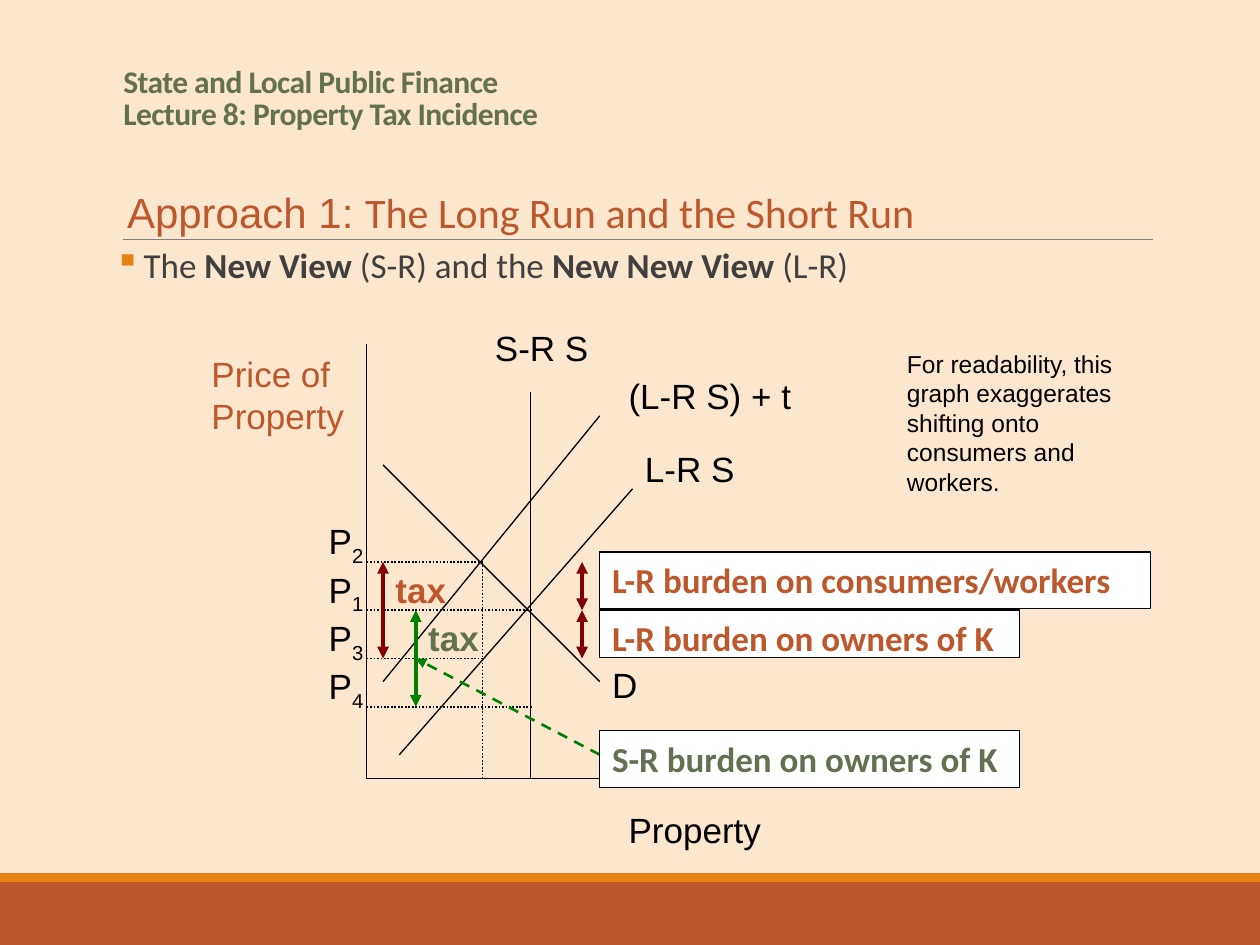
from dataclasses import dataclass

from lxml import etree
from pptx import Presentation
from pptx.dml.color import RGBColor
from pptx.enum.dml import MSO_LINE
from pptx.enum.shapes import MSO_CONNECTOR, MSO_SHAPE
from pptx.enum.text import MSO_ANCHOR
from pptx.oxml.ns import qn
from pptx.util import Inches, Pt

RECTANGLE = MSO_SHAPE.RECTANGLE
STRAIGHT = MSO_CONNECTOR.STRAIGHT
BOTTOM, TOP = MSO_ANCHOR.BOTTOM, MSO_ANCHOR.TOP
DOTTED, DASHED = MSO_LINE.ROUND_DOT, MSO_LINE.DASH


@dataclass(frozen=True)
class Theme:
    background: str = "FBE6CE"
    rust: str = "BD582C"
    orange: str = "E48312"
    olive: str = "637052"
    gray: str = "404040"
    rule: str = "808080"
    black: str = "000000"
    white: str = "FFFFFF"
    maroon: str = "800000"
    green: str = "008000"
    plain: str = "Arial"
    heading: str = "Calibri"
    note_size: int = 14
    title_size: int = 18
    text_size: int = 20
    subtitle_size: int = 24


THEME = Theme()


@dataclass(frozen=True)
class Line:
    start: tuple[float, float]
    end: tuple[float, float]
    color: str = THEME.black
    width: float = 0.75
    dash: MSO_LINE | None = None
    heads: tuple[str, ...] = ()


@dataclass(frozen=True)
class Label:
    text: str
    box: tuple[float, float, float, float]
    color: str = THEME.black
    size: int = THEME.text_size
    font: str = THEME.plain
    bold: bool | None = None
    subscript: str = ""


def rgb(color: str) -> RGBColor:
    return RGBColor.from_string(color)


def add_rectangle(slide, box, fill: str, outline: str | None = None):
    shape = slide.shapes.add_shape(RECTANGLE, *map(Inches, box))
    shape.shadow.inherit = False
    shape.fill.solid()
    shape.fill.fore_color.rgb = rgb(fill)
    if outline:
        shape.line.color.rgb = rgb(outline)
        shape.line.width = Pt(0.75)
    else:
        shape.line.fill.background()
    return shape


def add_line(slide, line: Line) -> None:
    points = map(Inches, (*line.start, *line.end))
    connector = slide.shapes.add_connector(STRAIGHT, *points)
    connector.line.color.rgb = rgb(line.color)
    connector.line.width = Pt(line.width)
    if line.dash:
        connector.line.dash_style = line.dash
    properties = connector.element.spPr
    outline = properties.find(qn("a:ln"))
    for head in line.heads:
        etree.SubElement(outline, qn(f"a:{head}"), type="triangle")
    etree.SubElement(properties, qn("a:effectLst"))


def write_label(shape, label: Label):
    """Put the label's text into a shape and return its paragraph."""
    frame = shape.text_frame
    frame.word_wrap = True
    frame.vertical_anchor = TOP
    paragraph = frame.paragraphs[0]
    paragraph.text = label.text
    paragraph.alignment = 1
    font = paragraph.font
    font.name, font.size, font.bold = label.font, Pt(label.size), label.bold
    font.color.rgb = rgb(label.color)
    if label.subscript:
        run = paragraph.add_run()
        run.text = label.subscript
        run.font._element.set("baseline", "-25000")
    return paragraph


def add_label(slide, label: Label):
    shape = slide.shapes.add_textbox(*map(Inches, label.box))
    return shape, write_label(shape, label)


def add_boxed_label(slide, text: str, box, color: str) -> None:
    shape = add_rectangle(slide, box, THEME.white, THEME.black)
    write_label(shape, Label(text, box, color, font=THEME.heading, bold=True))


def add_headings(slide) -> None:
    shape, paragraph = add_label(slide, Label(
        "State and Local Public Finance\vLecture 8: Property Tax Incidence",
        (0.88, 0.33, 8.25, 0.77), THEME.olive, THEME.title_size, THEME.heading, True))
    shape.text_frame.vertical_anchor = BOTTOM
    paragraph.line_spacing = 0.85
    for run in paragraph.runs:
        run.font._element.set("spc", "-30")

    shape, paragraph = add_label(slide, Label(
        "Approach 1: ", (0.91, 1.43, 6.51, 0.5), THEME.rust, THEME.subtitle_size))
    shape.text_frame.word_wrap = False
    run = paragraph.add_run()
    run.text = "The Long Run and the Short Run"
    run.font.name = THEME.heading

    shape, paragraph = add_label(slide, Label(
        "The ", (0.91, 1.95, 6.76, 0.38), THEME.gray, font=THEME.heading))
    shape.text_frame.margin_left = shape.text_frame.margin_right = 0
    paragraph.line_spacing = 0.8
    paragraph.space_before, paragraph.space_after = Pt(6.8), Pt(1.1)
    for text, bold in (("New View", True), (" (S-R) and the ", False),
                       ("New New View ", True), ("(L-R)", False)):
        run = paragraph.add_run()
        run.text, run.font.bold = text, bold
    add_bullet(paragraph, "▪", THEME.orange, 0.23)


def add_bullet(paragraph, character: str, color: str, indent: float) -> None:
    properties = paragraph._p.get_or_add_pPr()
    properties.set("marL", str(Inches(indent)))
    properties.set("indent", str(-Inches(indent)))
    bullet_color = etree.Element(qn("a:buClr"))
    etree.SubElement(bullet_color, qn("a:srgbClr"), val=color)
    bullet = etree.Element(qn("a:buChar"), char=character)
    default_run = properties.find(qn("a:defRPr"))
    default_run.addprevious(bullet_color)
    default_run.addprevious(bullet)


def add_graph(slide) -> None:
    left, base, step = 2.91, 6.18, 0.383
    price = {name: 4.46 + step * row for row, name in enumerate("2134")}
    guide_ends = {"2": 3.83, "1": 4.23, "3": 3.83, "4": 4.23}
    both = ("headEnd", "tailEnd")

    lines = [
        Line((left, 2.73), (left, base)),
        Line((left, base), (5.15, base)),
        Line((3.04, 3.69), (4.76, 5.41)),  # demand
        Line((3.04, 5.41), (4.76, 3.3)),  # long-run supply plus tax
        Line((3.17, 5.99), (5.02, 3.88)),  # long-run supply
        Line((4.21, base), (4.21, 3.11)),  # short-run supply
        Line((3.83, price["2"]), (3.83, base), width=1, dash=DOTTED),
    ]
    lines += [Line((left, price[name]), (end, price[name]), width=1, dash=DOTTED)
              for name, end in guide_ends.items()]
    lines += [Line((x, price[upper]), (x, price[lower]), color, 2.25, heads=both)
              for x, upper, lower, color in (
                  (3.04, "2", "3", THEME.maroon), (4.62, "2", "1", THEME.maroon),
                  (4.62, "1", "3", THEME.maroon), (3.3, "1", "4", THEME.green))]
    lines.append(Line((4.76, 5.99), (3.3, price["3"]), THEME.green, 1.5, DASHED, ("tailEnd",)))
    for line in lines:
        add_line(slide, line)

    labels = [Label("P", (2.51, level - step, 0.53, 0.58), subscript=name)
              for name, level in price.items()]
    labels += [
        Label("Property", (4.89, 6.37, 1.95, 0.77)),
        Label("L-R S", (5.02, 3.5, 1.06, 0.58)),
        Label("(L-R S) + t", (4.89, 2.92, 1.72, 0.57)),
        Label("S-R S", (3.83, 2.54, 1.06, 0.58)),
        Label("D", (4.76, 5.22, 0.66, 0.58)),
        Label("tax", (3.04, price["2"], 0.75, 0.76), THEME.rust, bold=True),
        Label("tax", (3.3, price["1"], 0.75, 0.76), THEME.olive, bold=True),
        Label("Price of Property", (1.58, 2.75, 1.27, 0.71), THEME.rust),
        Label("For readability, this graph exaggerates shifting onto consumers and workers.",
              (7.1, 2.72, 1.96, 1.28), size=THEME.note_size),
    ]
    for label in labels:
        add_label(slide, label)

    for text, top, width, height, color in (
            ("L-R burden on consumers/workers", 4.38, 4.37, 0.45, THEME.rust),
            ("L-R burden on owners of K", 4.84, 3.33, 0.38, THEME.rust),
            ("S-R burden on owners of K", 5.8, 3.33, 0.45, THEME.olive)):
        add_boxed_label(slide, text, (4.76, top, width, height), color)


def main() -> None:
    presentation = Presentation()
    presentation.slide_width, presentation.slide_height = Inches(10), Inches(7.5)
    slide = presentation.slides.add_slide(presentation.slide_layouts[6])
    slide.background.fill.solid()
    slide.background.fill.fore_color.rgb = rgb(THEME.background)
    add_rectangle(slide, (0, 7, 10, 0.5), THEME.rust)
    add_rectangle(slide, (0, 6.93, 10, 0.07), THEME.orange)
    add_line(slide, Line((0.98, 1.9), (9.15, 1.9), THEME.rule, 0.5))
    add_headings(slide)
    add_graph(slide)
    presentation.save("out.pptx")


if __name__ == "__main__":
    main()
